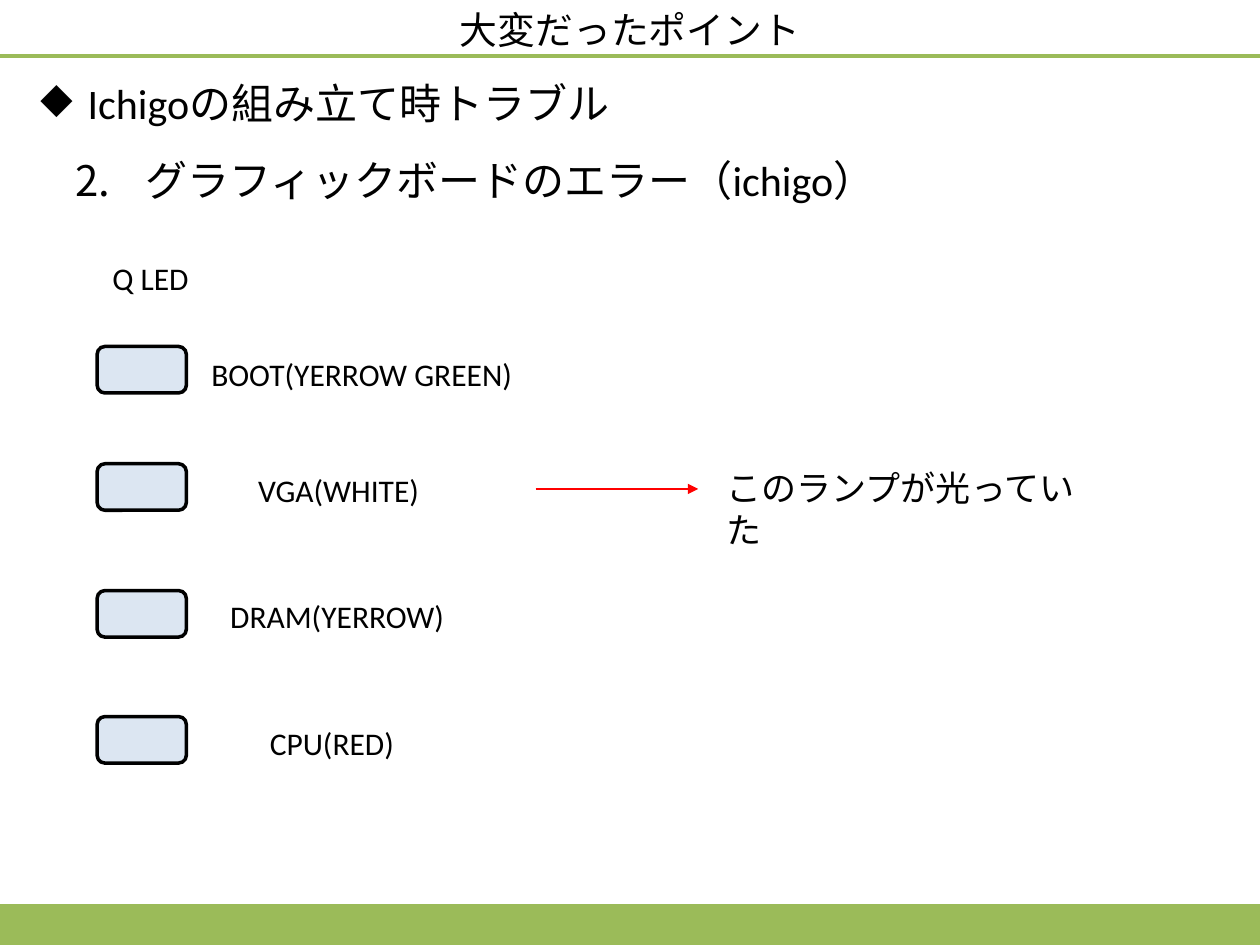
from dataclasses import dataclass

from lxml.etree import SubElement
from pptx import Presentation
from pptx.dml.color import RGBColor as RGB
from pptx.enum.shapes import MSO_CONNECTOR as CONNECTOR, MSO_SHAPE as SHAPE
from pptx.enum.text import MSO_ANCHOR as ANCHOR, PP_ALIGN as ALIGN
from pptx.oxml.ns import qn
from pptx.util import Pt


@dataclass(frozen=True)
class Theme:
    font: str = "Calibri"
    text: RGB = RGB(0, 0, 0)
    green: RGB = RGB(0x9B, 0xBB, 0x59)
    lamp: RGB = RGB(0xDC, 0xE6, 0xF2)
    red: RGB = RGB(0xFF, 0, 0)
    title_size: float = 21.6
    heading_size: float = 24
    note_size: float = 20
    label_size: float = 18


theme = Theme()


def add_text(shape, text, size, align=ALIGN.LEFT, spacing=1.0, bullet=None, indent=0):
    """Write one paragraph; bullet is a (tag, attributes) pair."""
    shape.text_frame.word_wrap = True
    paragraph = shape.text_frame.paragraphs[0]
    paragraph.text = text
    paragraph.alignment = align
    paragraph.line_spacing = spacing
    if bullet:
        tag, attributes = bullet
        properties = paragraph._p.get_or_add_pPr()
        properties.set("marL", str(Pt(indent)))
        properties.set("indent", str(-Pt(indent)))
        SubElement(properties, qn(tag), attributes)
    paragraph.font.name = theme.font
    paragraph.font.size = Pt(size)
    paragraph.font.color.rgb = theme.text


def add_line(left, right, y, color, width):
    line = slide.shapes.add_connector(
        CONNECTOR.STRAIGHT, Pt(left), Pt(y), Pt(right), Pt(y))
    line.line.color.rgb = color
    line.line.width = Pt(width)
    SubElement(line._element.spPr, qn("a:effectLst"))
    return line


presentation = Presentation()
presentation.slide_width, presentation.slide_height = Pt(720), Pt(540)
slide = presentation.slides.add_slide(presentation.slide_layouts[5])

# Footer band and title rule
band = slide.shapes.add_shape(SHAPE.RECTANGLE, Pt(0), Pt(517.5), Pt(720), Pt(22.5))
band.shadow.inherit = False
band.fill.solid()
band.fill.fore_color.rgb = theme.green
band.line.color.rgb = theme.green
band.line.width = Pt(2)
add_line(0, 720, 32, theme.green, 2.25)

# Title
title = slide.shapes.title
title.left, title.top, title.width, title.height = Pt(36), Pt(0), Pt(648), Pt(33)
title.text_frame.vertical_anchor = ANCHOR.MIDDLE
add_text(title, "大変だったポイント", theme.title_size, ALIGN.CENTER)

# Headings
heading = slide.shapes.add_textbox(Pt(16), Pt(40.5), Pt(677.5), Pt(36))
add_text(heading, "Ichigoの組み立て時トラブル", theme.heading_size,
         bullet=("a:buChar", {"char": "◆"}), indent=27)
subheading = slide.shapes.add_textbox(Pt(36), Pt(70.5), Pt(677.5), Pt(46))
add_text(subheading, "グラフィックボードのエラー（ichigo）", theme.heading_size, spacing=1.5,
         bullet=("a:buAutoNum", {"type": "arabicPeriod", "startAt": "2"}), indent=40)

# Lamps
for top in (198, 265, 337.5, 409.5):
    lamp = slide.shapes.add_shape(
        SHAPE.ROUNDED_RECTANGLE, Pt(55.5), Pt(top), Pt(51), Pt(26.6))
    lamp.shadow.inherit = False
    lamp.fill.solid()
    lamp.fill.fore_color.rgb = theme.lamp
    lamp.line.color.rgb = theme.text
    lamp.line.width = Pt(2)

# Lamp labels: text, left, top, width
labels = [
    ("Q LED", 36, 144.7, 100),
    ("BOOT(YERROW GREEN)", 98, 199.4, 217.4),
    ("VGA(WHITE)", 100, 265.7, 187),
    ("DRAM(YERROW)", 98, 337.7, 189.4),
    ("CPU(RED)", 100, 410.4, 179.3),
]
for text, left, top, width in labels:
    label = slide.shapes.add_textbox(Pt(left), Pt(top), Pt(width), Pt(29))
    add_text(label, text, theme.label_size, ALIGN.CENTER)

# Arrow to the note on the lit lamp
arrow = add_line(306, 399, 279.4, theme.red, 0.75)
SubElement(arrow.line._get_or_add_ln(), qn("a:tailEnd"), {"type": "triangle"})
note = slide.shapes.add_textbox(Pt(408.2), Pt(262.8), Pt(227.5), Pt(31.5))
add_text(note, "このランプが光っていた", theme.note_size)

presentation.save("out.pptx")
